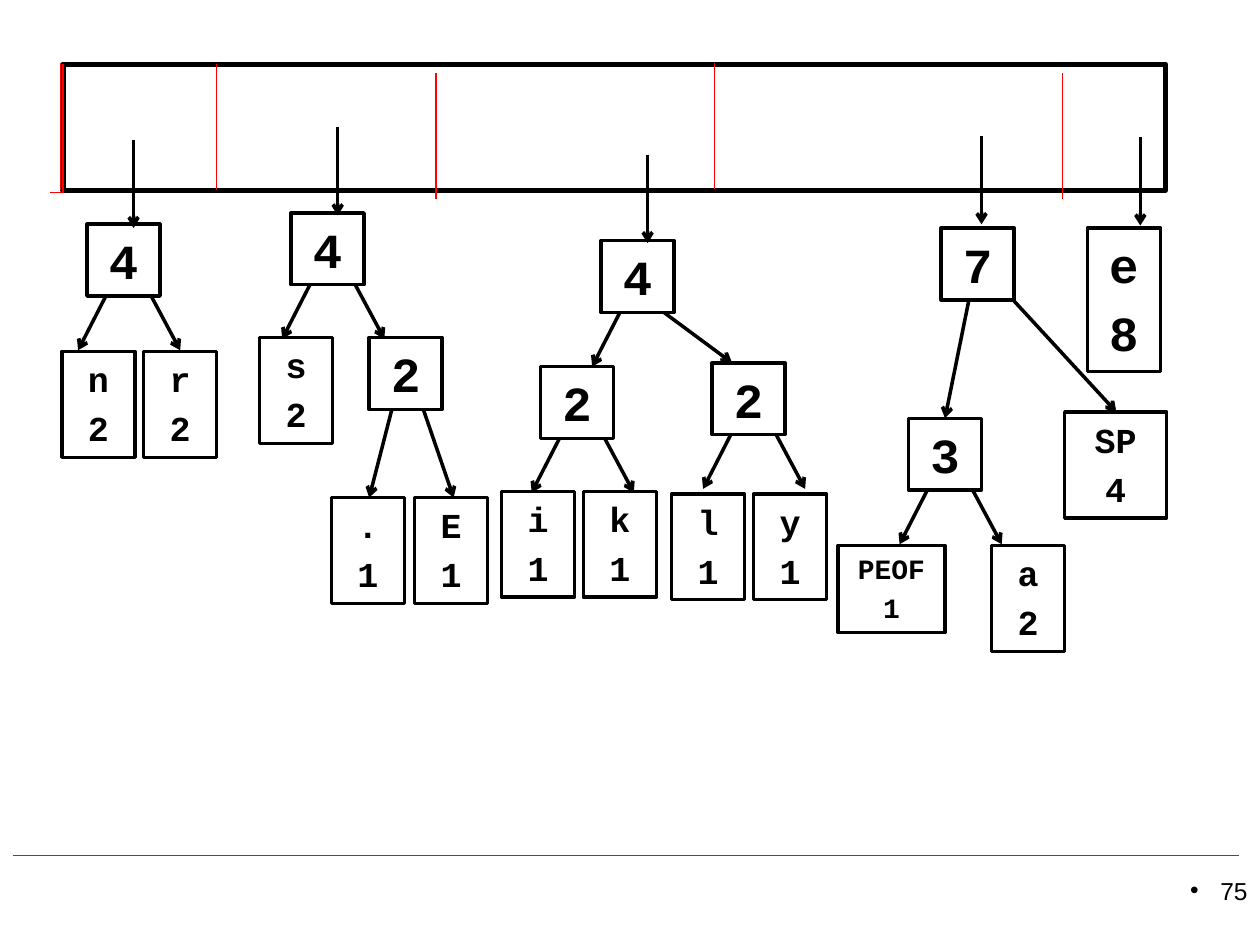
from dataclasses import dataclass

from lxml.etree import SubElement
from pptx import Presentation
from pptx.dml.color import RGBColor
from pptx.enum.shapes import MSO_CONNECTOR, MSO_SHAPE
from pptx.enum.text import MSO_ANCHOR, MSO_AUTO_SIZE, PP_ALIGN
from pptx.oxml.ns import qn
from pptx.util import Inches, Pt


@dataclass(frozen=True)
class Theme:
    ink: RGBColor = RGBColor(0, 0, 0)
    accent: RGBColor = RGBColor(255, 0, 0)
    node_font: str = "Courier New"
    number_font: str = "Arial"
    count_size: int = 28
    leaf_size: int = 20
    small_size: int = 16
    number_size: int = 14
    thin: float = 0.75
    medium: float = 2
    thick: float = 3


THEME = Theme()
NODE_WIDTH = 0.58
COUNT_HEIGHT = 0.57
PAIR_HEIGHTS = {THEME.small_size: 0.69, THEME.leaf_size: 0.84, THEME.count_size: 1.14}
LEFT_EDGE = (0.15, -0.07, 0.43)
RIGHT_EDGE = (0.51, 0.74, 0.43)


@dataclass(frozen=True)
class Node:
    """A tree node, offset from its parent; edge is start x, end x and drop."""
    lines: tuple
    left: float = 0
    top: float = 0
    children: tuple = ()
    edge: tuple = ()
    size: int = THEME.leaf_size
    width: float = NODE_WIDTH


def count(number, left=0, top=0, children=(), edge=()):
    return Node((number,), left, top, children, edge, THEME.count_size)


# Root left and top, pointer tip relative to the root, tree
TREES = [
    (0.69, 1.78, (0.37, 0.03), count("4", children=(
        Node(("n", "2"), -0.2, 1.01), Node(("r", "2"), 0.45, 1.01)))),
    (2.31, 1.69, (0.37, 0.02), count("4", children=(
        Node(("s", "2"), -0.25, 0.99),
        count("2", 0.62, 0.99, (
            Node((".", "1"), -0.3, 1.27, edge=(0.18, 0, 0.7)),
            Node(("E", "1"), 0.36, 1.27, edge=(0.43, 0.67, 0.7))))))),
    (4.77, 1.91, (0.37, 0.02), count("4", children=(
        count("2", -0.48, 1, (
            Node(("i", "1"), -0.31, 0.99), Node(("k", "1"), 0.34, 0.99))),
        count("2", 0.88, 0.97, (
            Node(("l", "1"), -0.32, 1.04), Node(("y", "1"), 0.33, 1.04)),
            edge=(0.5, 1.04, 0.4))))),
    (7.47, 1.81, (0.32, -0.03), count("7", children=(
        count("3", -0.26, 1.51, (
            Node(("PEOF", "1"), -0.56, 1.01, size=THEME.small_size, width=0.85),
            Node(("a", "2"), 0.66, 1.01)), edge=(0.22, 0.03, 0.94)),
        Node(("SP", "4"), 0.98, 1.46, edge=(0.57, 1.39, 0.89), width=0.81)))),
    (8.63, 1.81, (0.42, -0.02), Node(("e", "8"), size=THEME.count_size)),
]


def set_format(target, values):
    for name, value in values.items():
        setattr(target, name, value)


def add_line(slide, start, end, color, width, arrow=False):
    points = [Inches(value) for value in (*start, *end)]
    connector = slide.shapes.add_connector(MSO_CONNECTOR.STRAIGHT, *points)
    connector.line.color.rgb = color
    connector.line.width = Pt(width)
    if arrow:
        SubElement(connector.line._get_or_add_ln(), qn("a:tailEnd"), type="arrow")
    SubElement(connector._element.spPr, qn("a:effectLst"))


def add_arrow(slide, start, end):
    add_line(slide, start, end, THEME.ink, THEME.medium, arrow=True)


def add_outline_box(slide, left, top, width, height, line_width):
    shape = slide.shapes.add_shape(
        MSO_SHAPE.RECTANGLE, *map(Inches, (left, top, width, height)))
    shape.shadow.inherit = False
    shape.fill.background()
    shape.line.color.rgb = THEME.ink
    shape.line.width = Pt(line_width)
    return shape


def write_paragraph(paragraph, text, alignment, font):
    paragraph.alignment = alignment
    run = paragraph.add_run()
    run.text = text
    set_format(run.font, font)
    run.font.color.rgb = THEME.ink


def add_node_box(slide, node, left, top):
    height = COUNT_HEIGHT if len(node.lines) == 1 else PAIR_HEIGHTS[node.size]
    shape = add_outline_box(slide, left, top, node.width, height, THEME.medium)
    frame = shape.text_frame
    set_format(frame, {"word_wrap": True, "vertical_anchor": MSO_ANCHOR.TOP,
                       "auto_size": MSO_AUTO_SIZE.SHAPE_TO_FIT_TEXT})
    font = {"name": THEME.node_font, "size": Pt(node.size), "bold": True}
    for index, text in enumerate(node.lines):
        paragraph = frame.add_paragraph() if index else frame.paragraphs[0]
        write_paragraph(paragraph, text, PP_ALIGN.CENTER, font)
        spacing = SubElement(paragraph._p.get_or_add_pPr(), qn("a:spcBef"))
        SubElement(spacing, qn("a:spcPct"), val="20000")


def add_tree(slide, node, left, top):
    """Draw a node at the given corner, then its edges and subtrees."""
    add_node_box(slide, node, left, top)
    bottom = top + COUNT_HEIGHT
    for child, default_edge in zip(node.children, (LEFT_EDGE, RIGHT_EDGE)):
        start, end, drop = child.edge or default_edge
        add_arrow(slide, (left + start, bottom), (left + end, bottom + drop))
        add_tree(slide, child, left + child.left, top + child.top)


def add_queue(slide, left, top, width, height):
    """Draw the queue bar and the dividers between its cells."""
    add_outline_box(slide, left, top, width, height, THEME.thick)
    dividers = [(0, 0, 1.02), (-0.02, 0, 1), (1.22, 0, 1),
                (2.96, 0.07, 1), (5.17, -0.01, 1), (7.93, 0.07, 1)]
    for x, y, length in dividers:
        add_line(slide, (left + x, top + y), (left + x, top + y + length),
                 THEME.accent, THEME.thin)


def add_forest(slide):
    for left, top, (tip_x, tip_y), root in TREES:
        add_tree(slide, root, left, top)
        x, y = left + tip_x, top + tip_y
        add_arrow(slide, (x, y - 0.7), (x, y))


def add_page_number(slide, left, top, width, height):
    box = slide.shapes.add_textbox(*map(Inches, (left, top, width, height)))
    box.text_frame.word_wrap = True
    paragraph = box.text_frame.paragraphs[0]
    write_paragraph(paragraph, "75", PP_ALIGN.RIGHT,
                    {"name": THEME.number_font, "size": Pt(THEME.number_size)})
    properties = paragraph._p.get_or_add_pPr()
    properties.set("marL", str(Inches(0.24)))
    properties.set("indent", str(Inches(-0.24)))
    SubElement(properties, qn("a:buFont"), typeface=THEME.number_font)
    SubElement(properties, qn("a:buChar"), char="•")


def main():
    presentation = Presentation()
    presentation.slide_width = Inches(10)
    presentation.slide_height = Inches(7.5)
    slide = presentation.slides.add_slide(presentation.slide_layouts[6])
    for left, right, y in [(0.4, 9.19, 1.53), (0.1, 9.83, 6.79)]:
        add_line(slide, (left, y), (right, y), THEME.accent, THEME.thin)
    add_page_number(slide, 7.67, 6.9, 2.33, 0.52)
    add_queue(slide, 0.5, 0.51, 8.75, 1)
    add_forest(slide)
    presentation.save("out.pptx")


if __name__ == "__main__":
    main()
